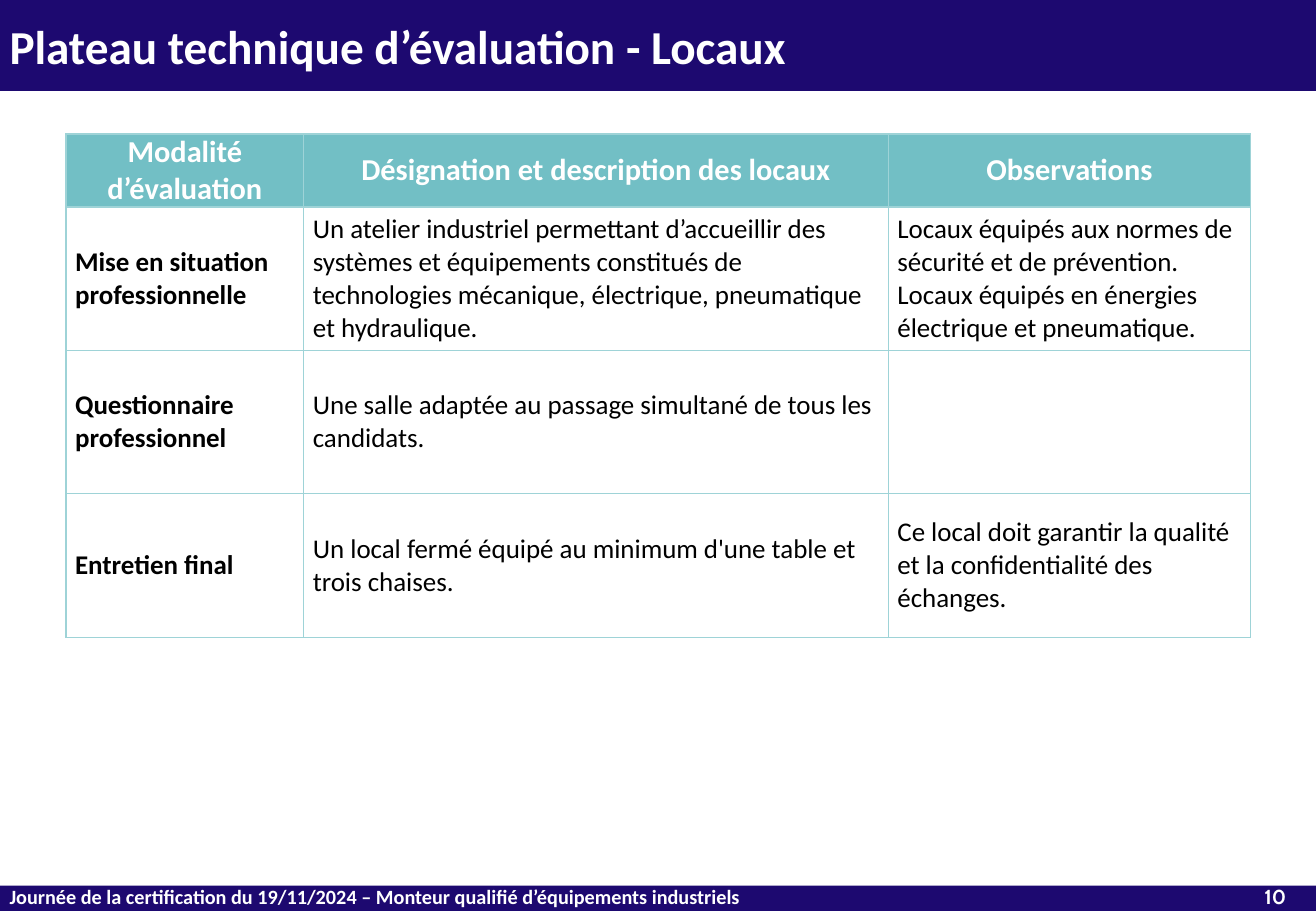
from dataclasses import dataclass

from lxml import etree
from pptx import Presentation
from pptx.dml.color import RGBColor
from pptx.enum.shapes import MSO_SHAPE
from pptx.enum.text import MSO_ANCHOR, PP_ALIGN
from pptx.oxml.ns import qn
from pptx.util import Cm, Pt

RECTANGLE = MSO_SHAPE.RECTANGLE
LEFT, CENTER = PP_ALIGN.LEFT, PP_ALIGN.CENTER
TOP, MIDDLE = MSO_ANCHOR.TOP, MSO_ANCHOR.MIDDLE


@dataclass(frozen=True)
class Theme:
    navy: str = "1D0970"
    teal: str = "72BFC5"
    border: str = "9ED3D7"
    white: str = "FFFFFF"
    black: str = "000000"
    font: str = "Calibri"
    number_font: str = "Cabin"
    title_size: int = 28
    header_size: int = 18
    body_size: int = 16
    footer_size: int = 12


theme = Theme()


def write(frame, text, *, size, color=theme.white, bold=True,
          font=theme.font, align=LEFT, anchor=TOP):
    frame.word_wrap = True
    frame.vertical_anchor = anchor
    paragraph = frame.paragraphs[0]
    paragraph.alignment = align
    run = paragraph.add_run()
    run.text = text
    run.font.name = font
    run.font.size = Pt(size)
    run.font.bold = bold
    run.font.color.rgb = RGBColor.from_string(color)


def add_borders(cell):
    properties = cell._tc.get_or_add_tcPr()
    for position, side in enumerate(("a:lnL", "a:lnR", "a:lnT", "a:lnB")):
        line = etree.Element(qn(side), w=str(Pt(1)))
        fill = etree.SubElement(line, qn("a:solidFill"))
        etree.SubElement(fill, qn("a:srgbClr"), val=theme.border)
        properties.insert(position, line)


prs = Presentation()
prs.slide_width, prs.slide_height = Cm(27.51), Cm(19.05)
slide = prs.slides.add_slide(prs.slide_layouts[6])

# Title and footer bands
for top, height in ((0, 1.9), (18.52, 0.53)):
    band = slide.shapes.add_shape(RECTANGLE, 0, Cm(top), prs.slide_width, Cm(height))
    band.shadow.inherit = False
    band.fill.solid()
    band.fill.fore_color.rgb = RGBColor.from_string(theme.navy)
    band.line.fill.background()

# Title, footer and page number
title = slide.shapes.add_textbox(Cm(-0.05), 0, Cm(24.77), Cm(1.93))
write(title.text_frame, "Plateau technique d’évaluation - Locaux",
      size=theme.title_size, anchor=MIDDLE)

footer = slide.shapes.add_textbox(Cm(-0.05), Cm(18.36), Cm(26), Cm(0.76))
write(footer.text_frame,
      "Journée de la certification du 19/11/2024 – Monteur qualifié d’équipements industriels",
      size=theme.footer_size)

page_number = slide.shapes.add_textbox(Cm(25.96), Cm(18.36), Cm(1.4), Cm(0.76))
write(page_number.text_frame, "10", size=theme.footer_size,
      font=theme.number_font, align=CENTER)

# Table of premises for each assessment method
premises = [
    ("Modalité d’évaluation", "Désignation et description des locaux", "Observations"),
    ("Mise en situation professionnelle",
     "Un atelier industriel permettant d’accueillir des systèmes et équipements "
     "constitués de technologies mécanique, électrique, pneumatique et hydraulique.",
     "Locaux équipés aux normes de sécurité et de prévention. "
     "Locaux équipés en énergies électrique et pneumatique."),
    ("Questionnaire professionnel",
     "Une salle adaptée au passage simultané de tous les candidats.", ""),
    ("Entretien final",
     "Un local fermé équipé au minimum d'une table et trois chaises.",
     "Ce local doit garantir la qualité et la confidentialité des échanges."),
]
column_widths = (4.97, 12.22, 7.57)
row_heights = (1.52, 3, 3, 3)

table = slide.shapes.add_table(
    len(premises), len(column_widths), Cm(1.38), Cm(2.8),
    Cm(sum(column_widths)), Cm(sum(row_heights))).table
table.horz_banding = False
for column, width in zip(table.columns, column_widths):
    column.width = Cm(width)

for row_index, (row, height, texts) in enumerate(zip(table.rows, row_heights, premises)):
    row.height = Cm(height)
    is_header = row_index == 0
    for column_index, (cell, text) in enumerate(zip(row.cells, texts)):
        cell.margin_left = cell.margin_right = Cm(0.19)
        cell.margin_top = cell.margin_bottom = 0
        cell.vertical_anchor = MIDDLE
        if is_header:
            cell.fill.solid()
            cell.fill.fore_color.rgb = RGBColor.from_string(theme.teal)
        else:
            cell.fill.background()
        add_borders(cell)
        if text:
            write(cell.text_frame, text,
                  size=theme.header_size if is_header else theme.body_size,
                  color=theme.white if is_header else theme.black,
                  bold=is_header or column_index == 0,
                  align=CENTER if is_header else LEFT, anchor=MIDDLE)

prs.save("out.pptx")
